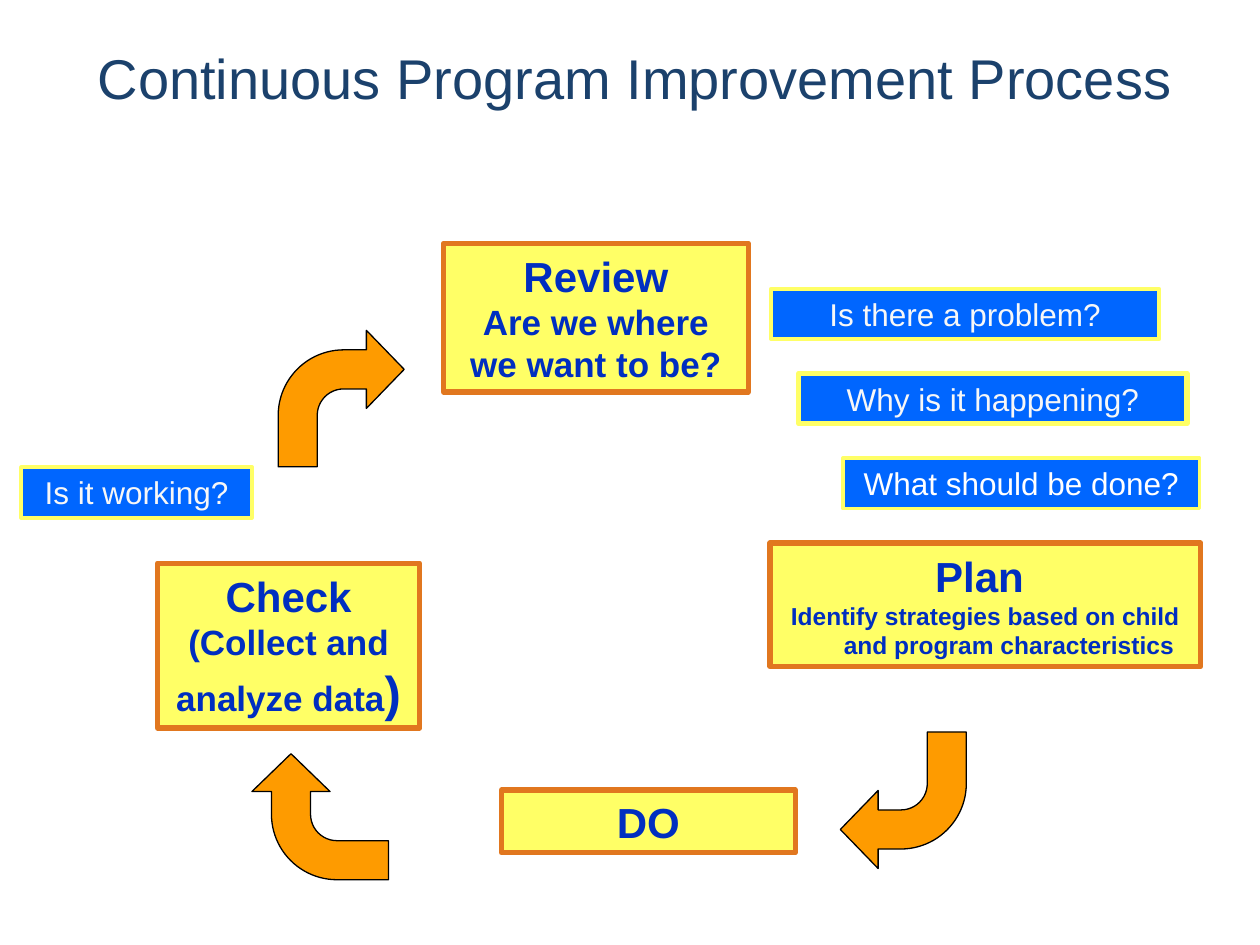
from pptx import Presentation
from pptx.dml.color import RGBColor
from pptx.enum import shapes, text
from pptx.util import Pt

COLORS = {
    "title": "1B416C", "step": "FFFF66", "step_line": "E1771F", "step_text": "002EC0",
    "question": "0066FF", "question_line": "FFFF66", "soft": "F7F7F7", "white": "FFFFFF",
    "arrow": "FE9B00", "arrow_line": "000000",
}


def color(name):
    """Return the named colour."""
    return RGBColor.from_string(COLORS[name])


def apply(target, values):
    """Set each attribute of the target from a dict."""
    for name, value in values.items():
        setattr(target, name, value)


def paint(shape, fill, line, width):
    """Give a shape a flat fill and an outline."""
    shape.shadow.inherit = False
    shape.fill.solid()
    shape.fill.fore_color.rgb = color(fill)
    shape.line.color.rgb = color(line)
    shape.line.width = Pt(width)


def write(shape, paragraphs, ink, bold=False, hanging=0):
    """Write centred paragraphs, each a list of (words, size) spans."""
    frame = shape.text_frame
    apply(frame, {"word_wrap": True, "vertical_anchor": text.MSO_ANCHOR.MIDDLE})
    for index, spans in enumerate(paragraphs):
        para = frame.add_paragraph() if index else frame.paragraphs[0]
        para.alignment = text.PP_ALIGN.CENTER
        if hanging:
            properties = para._p.get_or_add_pPr()
            properties.set("marL", str(Pt(hanging)))
            properties.set("indent", str(Pt(-hanging)))
        for words, size in spans:
            span = para.add_run()
            span.text = words
            apply(span.font, {"name": "Arial", "size": Pt(size), "bold": bold})
            span.font.color.rgb = color(ink)


def add_title(page, box, words):
    """Place the slide heading."""
    title = page.shapes.add_textbox(*map(Pt, box))
    write(title, [[(words, 32)]], "title")
    apply(title.text_frame, {"vertical_anchor": text.MSO_ANCHOR.TOP, "margin_top": Pt(7)})


def add_step(page, box, paragraphs, hanging=0):
    """Place one yellow step of the cycle."""
    step = page.shapes.add_shape(shapes.MSO_SHAPE.RECTANGLE, *map(Pt, box))
    paint(step, "step", "step_line", 3)
    write(step, paragraphs, "step_text", True, hanging)


def add_question(page, box, words, ink="soft", width=2.25):
    """Place one blue question box."""
    question = page.shapes.add_shape(shapes.MSO_SHAPE.RECTANGLE, *map(Pt, box))
    paint(question, "question", "question_line", width)
    write(question, [[(words, 18)]], ink)


def add_arrow(page, box, rotation):
    """Place one bent arrow turned by the given degrees."""
    arrow = page.shapes.add_shape(shapes.MSO_SHAPE.BENT_ARROW, *map(Pt, box))
    paint(arrow, "arrow", "arrow_line", 0.75)
    for index, value in enumerate((0.31, 0.31, 0.3, 0.52)):
        arrow.adjustments[index] = value
    arrow.rotation = rotation


def add_cycle(page):
    """Place the steps, arrows and questions of the cycle."""
    add_step(page, (440, 310.3, 246.2, 70.6), [
        [("Plan ", 24)],
        [("Identify strategies based on child and program characteristics", 14)],
    ], hanging=27)
    add_step(page, (286.6, 451.4, 167.8, 36), [[("DO", 24)]])
    add_step(page, (90, 321.8, 149.8, 94.3), [
        [("Check", 24)], [("(Collect and analyze data", 20), (")", 28)],
    ])
    add_step(page, (253.4, 139, 174.2, 85), [
        [("Review", 24)], [("Are we where we want to be?", 20)],
    ])
    for left, top, rotation in ((159, 188.8, 0), (147, 427.7, 270), (480.2, 418.3, 180)):
        add_arrow(page, (left, top, 72, 78), rotation)
    for left, top, wide, words, ink, line in (
        (440.6, 165, 221.8, "Is there a problem?", "soft", 2.25),
        (456.5, 213.4, 221.8, "Why is it happening?", "soft", 3),
        (481.7, 261.8, 203.8, "What should be done?", "white", 2.25),
        (12.2, 267, 131.8, "Is it working?", "soft", 2.25),
    ):
        add_question(page, (left, top, wide, 28.8), words, ink, line)


def main():
    """Build and save the deck."""
    deck = Presentation()
    apply(deck, {"slide_width": Pt(720), "slide_height": Pt(540)})
    page = deck.slides.add_slide(deck.slide_layouts[6])
    add_title(page, (18, 18, 690, 60), "Continuous Program Improvement Process")
    add_cycle(page)
    deck.save("out.pptx")


if __name__ == "__main__":
    main()
